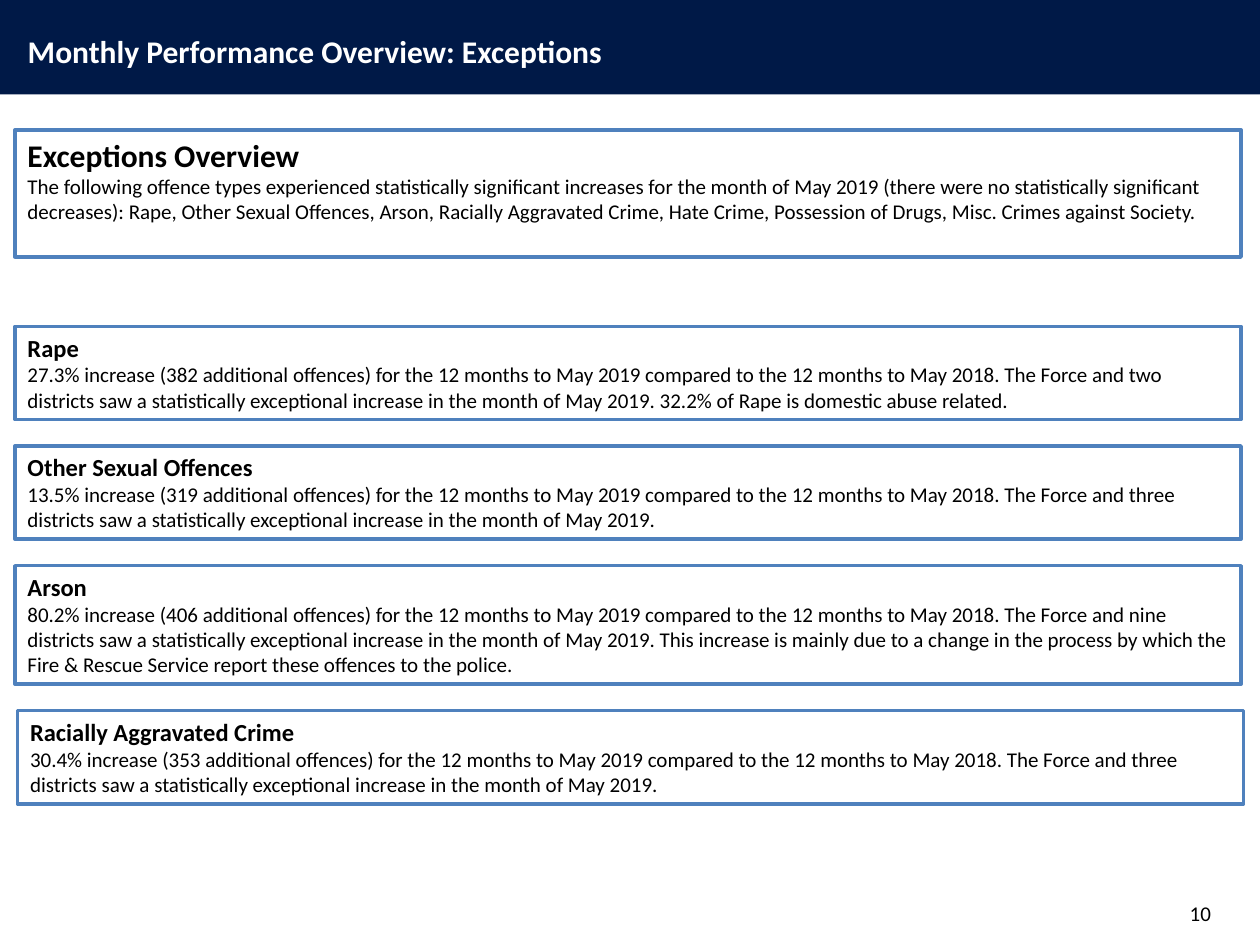
from pptx import Presentation
from pptx.dml.color import RGBColor
from pptx.enum.shapes import MSO_SHAPE
from pptx.enum.text import MSO_ANCHOR, MSO_AUTO_SIZE, PP_ALIGN
from pptx.util import Inches, Pt

RECTANGLE = MSO_SHAPE.RECTANGLE
TOP, MIDDLE = MSO_ANCHOR.TOP, MSO_ANCHOR.MIDDLE
LEFT, RIGHT = PP_ALIGN.LEFT, PP_ALIGN.RIGHT
FIXED_SIZE = MSO_AUTO_SIZE.NONE

# Content
TITLE = "Monthly Performance Overview: Exceptions"
PAGE_NUMBER = "10"
OVERVIEW = (
    "Exceptions Overview",
    "The following offence types experienced statistically significant increases for the month "
    "of May 2019 (there were no statistically significant decreases): Rape, Other Sexual Offences, "
    "Arson, Racially Aggravated Crime, Hate Crime, Possession of Drugs, Misc. Crimes against Society.",
)
PERIOD = "for the 12 months to May 2019 compared to the 12 months to May 2018."
EXCEPTIONAL = "districts saw a statistically exceptional increase in the month of May 2019."
# heading, increase, number of districts, closing remark, left, height
OFFENCES = [
    ("Rape", "27.3% increase (382 additional offences)", "two",
     " 32.2% of Rape is domestic abuse related.", 0.12, 0.74),
    ("Other Sexual Offences", "13.5% increase (319 additional offences)", "three",
     "", 0.12, 0.74),
    ("Arson", "80.2% increase (406 additional offences)", "nine",
     " This increase is mainly due to a change in the process by which the Fire & Rescue Service "
     "report these offences to the police.", 0.12, 0.94),
    ("Racially Aggravated Crime", "30.4% increase (353 additional offences)", "three",
     "", 0.14, 0.74),
]

# Theme and layout
THEME = {
    "font": "Calibri",
    "navy": RGBColor(0x00, 0x19, 0x47),
    "blue": RGBColor(0x4F, 0x81, 0xBD),
    "white": RGBColor(0xFF, 0xFF, 0xFF),
    "black": RGBColor(0x00, 0x00, 0x00),
    "title": 18,
    "heading": 14,
    "body": 12,
    "line": 2,
}
BOX_LEFT, BOX_WIDTH = 0.12, 9.73
FIRST_OFFENCE_TOP, BOX_GAP = 2.59, 0.21


def write_text(shape, lines, anchor=TOP, alignment=LEFT):
    """Fill a shape with (text, size, bold, colour) paragraphs."""
    frame = shape.text_frame
    settings = {"word_wrap": True, "auto_size": FIXED_SIZE, "vertical_anchor": anchor,
                "margin_left": Inches(0.1), "margin_right": Inches(0.1),
                "margin_top": Inches(0.05), "margin_bottom": Inches(0.05)}
    for name, value in settings.items():
        setattr(frame, name, value)
    for index, (text, size, bold, colour) in enumerate(lines):
        paragraph = frame.add_paragraph() if index else frame.paragraphs[0]
        paragraph.alignment = alignment
        run = paragraph.add_run()
        run.text = text
        for name, value in {"name": THEME["font"], "size": Pt(size), "bold": bold}.items():
            setattr(run.font, name, value)
        run.font.color.rgb = colour


def add_rectangle(slide, left, top, width, height, fill, line=None):
    shape = slide.shapes.add_shape(
        RECTANGLE, Inches(left), Inches(top), Inches(width), Inches(height))
    shape.shadow.inherit = False
    shape.fill.solid()
    shape.fill.fore_color.rgb = fill
    if line is None:
        shape.line.fill.background()
    else:
        shape.line.color.rgb = line
        shape.line.width = Pt(THEME["line"])
    return shape


def add_box(slide, left, top, height, heading, body, heading_size):
    box = add_rectangle(slide, left, top, BOX_WIDTH, height, THEME["white"], THEME["blue"])
    write_text(box, [(heading, heading_size, True, THEME["black"]),
                     (body, THEME["body"], False, THEME["black"])])


def main():
    presentation = Presentation()
    presentation.slide_width, presentation.slide_height = Inches(10), Inches(7.5)
    slide = presentation.slides.add_slide(presentation.slide_layouts[5])

    # Banner, placed behind the title
    banner = add_rectangle(slide, 0, 0, 10, 0.75, THEME["navy"])
    title = slide.shapes.title
    title.element.addprevious(banner.element)
    title.left, title.top = Inches(0.12), Inches(0.2)
    title.width, title.height = Inches(7.87), Inches(0.4)
    write_text(title, [(TITLE, THEME["title"], True, THEME["white"])])

    # Overview
    add_box(slide, BOX_LEFT, 1.03, 1.01, *OVERVIEW, THEME["title"])

    # Offence boxes, stacked with equal gaps
    top = FIRST_OFFENCE_TOP
    for heading, increase, districts, remark, left, height in OFFENCES:
        body = f"{increase} {PERIOD} The Force and {districts} {EXCEPTIONAL}{remark}"
        add_box(slide, left, top, height, heading, body, THEME["heading"])
        top += height + BOX_GAP

    # Page number
    number = slide.shapes.add_textbox(Inches(7.38), Inches(7.05), Inches(2.33), Inches(0.4))
    write_text(number, [(PAGE_NUMBER, THEME["body"], False, THEME["black"])], MIDDLE, RIGHT)

    presentation.save("out.pptx")


if __name__ == "__main__":
    main()
